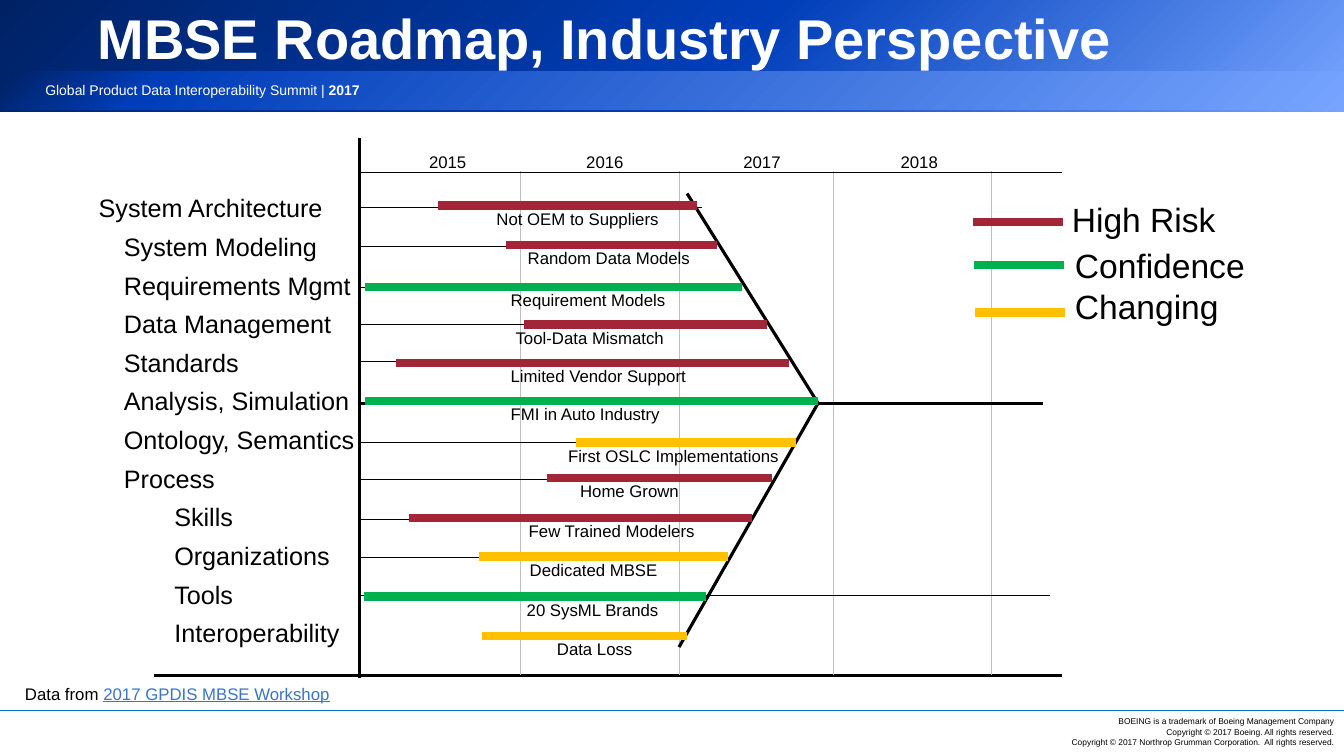
from dataclasses import dataclass

from lxml import etree
from pptx import Presentation
from pptx.dml.color import RGBColor
from pptx.enum.shapes import MSO_CONNECTOR, MSO_SHAPE
from pptx.enum.text import MSO_ANCHOR as Anchor, MSO_AUTO_SIZE as AutoSize, PP_ALIGN as Align
from pptx.oxml.ns import qn
from pptx.util import Inches, Pt

FONT = "Arial"
BLACK, WHITE, GRID, LINK = "000000", "FFFFFF", "BFBFBF", "3A75C4"
RULE_BLUE, LIGHT_BLUE, BLUE, NAVY = "0070C0", "76A4FF", "003EB9", "002265"
HIGH_RISK, CONFIDENCE, CHANGING = "A32638", "00B050", "FFC000"
SLIDE_WIDTH = 13.34
AXIS_X, AXIS_Y, CHART_RIGHT = 3.57, 6.7, 10.54
TIP = (8.12, 4)


@dataclass
class Row:
    label: str
    level: int
    color: str
    start: float
    end: float
    bar_y: float
    track_y: float
    track_end: float
    caption: str
    caption_left: float
    track_width: float = 0.75


@dataclass
class LegendItem:
    text: str
    color: str
    line_left: float
    line_y: float
    text_left: float
    text_top: float


ROWS = [
    Row("System Architecture", 0, HIGH_RISK, 4.35, 6.92, 2.04, 2.06, 6.97, "Not OEM to Suppliers", 4.83),
    Row("System Modeling", 1, HIGH_RISK, 5.02, 7.12, 2.43, 2.45, 6.98, "Random Data Models", 5.14),
    Row("Requirements Mgmt", 1, CONFIDENCE, 3.62, 7.37, 2.85, 2.85, 6.99, "Requirement Models", 4.97),
    Row("Data Management", 1, HIGH_RISK, 5.2, 7.61, 3.22, 3.22, 6.99, "Tool-Data Mismatch", 5.02),
    Row("Standards", 1, HIGH_RISK, 3.93, 7.83, 3.6, 3.59, 6.98, "Limited Vendor Support", 4.97),
    Row("Analysis, Simulation", 1, CONFIDENCE, 3.62, 8.12, 3.98, 4, 10.35, "FMI in Auto Industry", 4.97, 2.25),
    Row("Ontology, Semantics", 1, CHANGING, 5.72, 7.9, 4.39, 4.39, 6.97, "First OSLC Implementations", 5.54),
    Row("Process", 1, HIGH_RISK, 5.43, 7.66, 4.74, 4.76, 7.52, "Home Grown", 5.66),
    Row("Skills", 2, HIGH_RISK, 4.06, 7.46, 5.14, 5.15, 7.36, "Few Trained Modelers", 5.15),
    Row("Organizations", 2, CHANGING, 4.75, 7.23, 5.52, 5.53, 7.14, "Dedicated MBSE", 5.16),
    Row("Tools", 2, CONFIDENCE, 3.61, 7.01, 5.92, 5.91, 10.42, "20 SysML Brands", 5.13),
    Row("Interoperability", 2, CHANGING, 4.78, 6.82, 6.31, 6.31, 6.82, "Data Loss", 5.43, 0),
]
LEGEND = [
    LegendItem("High Risk", HIGH_RISK, 9.66, 2.2, 10.54, 1.92),
    LegendItem("Confidence", CONFIDENCE, 9.67, 2.63, 10.57, 2.38),
    LegendItem("Changing", CHANGING, 9.68, 3.1, 10.57, 2.79),
]
LEVEL_INDENTS = [0, 0.25, 0.75]
COPYRIGHT = [
    "BOEING is a trademark of Boeing Management Company",
    "Copyright © 2017 Boeing. All rights reserved.",
    "Copyright © 2017 Northrop Grumman Corporation.  All rights reserved.",
]


def rgb(color: str) -> RGBColor:
    return RGBColor.from_string(color)


def place(shape, left: float, top: float, width: float, height: float) -> None:
    shape.left, shape.top = Inches(left), Inches(top)
    shape.width, shape.height = Inches(width), Inches(height)


def set_frame(frame, left: float = 0.1, top: float = 0.05, right: float = 0.1, bottom: float = 0.05) -> None:
    frame.word_wrap = True
    frame.auto_size = AutoSize.NONE
    frame.margin_left, frame.margin_top = Inches(left), Inches(top)
    frame.margin_right, frame.margin_bottom = Inches(right), Inches(bottom)


def set_font(paragraph, size: float, color: str = BLACK, bold: bool = False) -> None:
    font = paragraph.font
    font.name, font.size, font.bold = FONT, Pt(size), bold
    font.color.rgb = rgb(color)


def add_text(slide, lines: list[str], left: float, top: float, width: float, height: float,
             size: float = 12, color: str = BLACK, align: Align = Align.LEFT,
             side_margins: tuple[float, float] = (0.1, 0.1)):
    frame = slide.shapes.add_textbox(Inches(left), Inches(top), Inches(width), Inches(height)).text_frame
    set_frame(frame, left=side_margins[0], right=side_margins[1])
    frame.text = "\n".join(lines)
    for paragraph in frame.paragraphs:
        paragraph.alignment = align
        set_font(paragraph, size, color)
    return frame


def add_line(slide, start: tuple[float, float], end: tuple[float, float], color: str, width: float) -> None:
    points = [Inches(value) for value in (*start, *end)]
    line = slide.shapes.add_connector(MSO_CONNECTOR.STRAIGHT, *points)
    line.line.color.rgb = rgb(color)
    line.line.width = Pt(width)
    etree.SubElement(line.element.spPr, qn("a:effectLst"))


def add_band(slide, top: float, height: float, blue_position: int) -> None:
    band = slide.shapes.add_shape(MSO_SHAPE.RECTANGLE, 0, Inches(top), Inches(SLIDE_WIDTH), Inches(height))
    band.shadow.inherit = False
    band.line.fill.background()
    band.fill.gradient()
    gradient = band.element.spPr.find(qn("a:gradFill"))
    stops = gradient.find(qn("a:gsLst"))
    stops.clear()
    for position, color in ((0, LIGHT_BLUE), (blue_position, BLUE), (100, NAVY)):
        stop = etree.SubElement(stops, qn("a:gs"), pos=str(position * 1000))
        etree.SubElement(stop, qn("a:srgbClr"), val=color)
    gradient.find(qn("a:lin")).set("ang", str(225 * 60000))


def add_header_and_footer(slide) -> None:
    add_band(slide, 0, 1.11, 46)
    add_band(slide, 0.71, 0.38, 88)
    summit = add_text(slide, ["Global Product Data Interoperability Summit | "], -0.02, 0.76, SLIDE_WIDTH, 0.27,
                      size=10, color=WHITE, side_margins=(0.47, 0.5))
    year = summit.paragraphs[0].add_run()
    year.text, year.font.bold = "2017", True
    add_text(slide, COPYRIGHT, 8.84, 7.06, 4.5, 0.4, size=6, align=Align.RIGHT)
    add_line(slide, (0, 7.05), (SLIDE_WIDTH, 7.05), RULE_BLUE, 0.5)


def fill_title(slide) -> None:
    title = slide.shapes.title
    title.element.getparent().append(title.element)  # in front of the bands
    place(title, 0.5, 0.09, 12.2, 0.62)
    frame = title.text_frame
    set_frame(frame, 0.47, 0.25, 0.5, 0)
    frame.vertical_anchor = Anchor.MIDDLE
    frame.text = "MBSE Roadmap, Industry Perspective"
    paragraph = frame.paragraphs[0]
    paragraph.alignment = Align.LEFT
    paragraph.line_spacing = Pt(26)
    set_font(paragraph, 40, WHITE, bold=True)


def fill_row_labels(slide) -> None:
    body = slide.placeholders[1]
    place(body, 0.88, 1.86, 2.73, 4.66)
    frame = body.text_frame
    set_frame(frame, right=0)
    frame.vertical_anchor = Anchor.TOP
    frame.text = "\n".join(row.label for row in ROWS)
    for index, (paragraph, row) in enumerate(zip(frame.paragraphs, ROWS)):
        paragraph.level = row.level
        paragraph.line_spacing = Pt(21.6)
        paragraph.space_before = Pt(6 if index else 0)
        properties = paragraph._p.get_or_add_pPr()
        properties.set("marL", str(Inches(LEVEL_INDENTS[row.level])))
        properties.set("indent", "0")
        etree.SubElement(properties, qn("a:buNone"))
        set_font(paragraph, 18)


def add_timeline(slide) -> None:
    # Axes, year grid and year names
    add_line(slide, (1.53, AXIS_Y), (CHART_RIGHT, AXIS_Y), BLACK, 2.25)
    add_line(slide, (AXIS_X, 1.37), (AXIS_X, 6.73), BLACK, 2.25)
    for x in (5.17, 6.74, 8.27, 9.84):
        add_line(slide, (x, 1.7), (x, AXIS_Y), GRID, 0.75)
    add_line(slide, (AXIS_X, 1.71), (CHART_RIGHT, 1.71), BLACK, 0.75)
    for index in range(4):
        add_text(slide, [str(2015 + index)], 4.16 + 1.56 * index, 1.46, 0.55, 0.3, side_margins=(0.1, 0))

    # Arrow outline
    for start in ((6.74, 6.42), (6.82, 1.92)):
        add_line(slide, start, TIP, BLACK, 2.25)

    # Tracks, then bars with captions
    for row in ROWS:
        if row.track_width:
            add_line(slide, (AXIS_X, row.track_y), (row.track_end, row.track_y), BLACK, row.track_width)
    for row in ROWS:
        add_line(slide, (row.start, row.bar_y), (row.end, row.bar_y), row.color, 6)
        add_text(slide, [row.caption], row.caption_left, row.bar_y - 0.02, 2.36, 0.3)


def add_legend(slide) -> None:
    for item in LEGEND:
        add_line(slide, (item.line_left, item.line_y), (item.line_left + 0.89, item.line_y), item.color, 6)
        add_text(slide, [item.text], item.text_left, item.text_top, 2.01, 0.5, size=24)


def add_source(slide) -> None:
    source = add_text(slide, ["Data from "], 0.15, 6.73, 3.37, 0.3)
    workshop = source.paragraphs[0].add_run()
    workshop.text, workshop.font.underline = "2017 GPDIS MBSE Workshop", True
    workshop.font.color.rgb = rgb(LINK)


def main() -> None:
    presentation = Presentation()
    presentation.slide_width, presentation.slide_height = Inches(SLIDE_WIDTH), Inches(7.5)
    slide = presentation.slides.add_slide(presentation.slide_layouts[1])
    add_header_and_footer(slide)
    fill_title(slide)
    fill_row_labels(slide)
    add_timeline(slide)
    add_legend(slide)
    add_source(slide)
    presentation.save("out.pptx")


if __name__ == "__main__":
    main()
